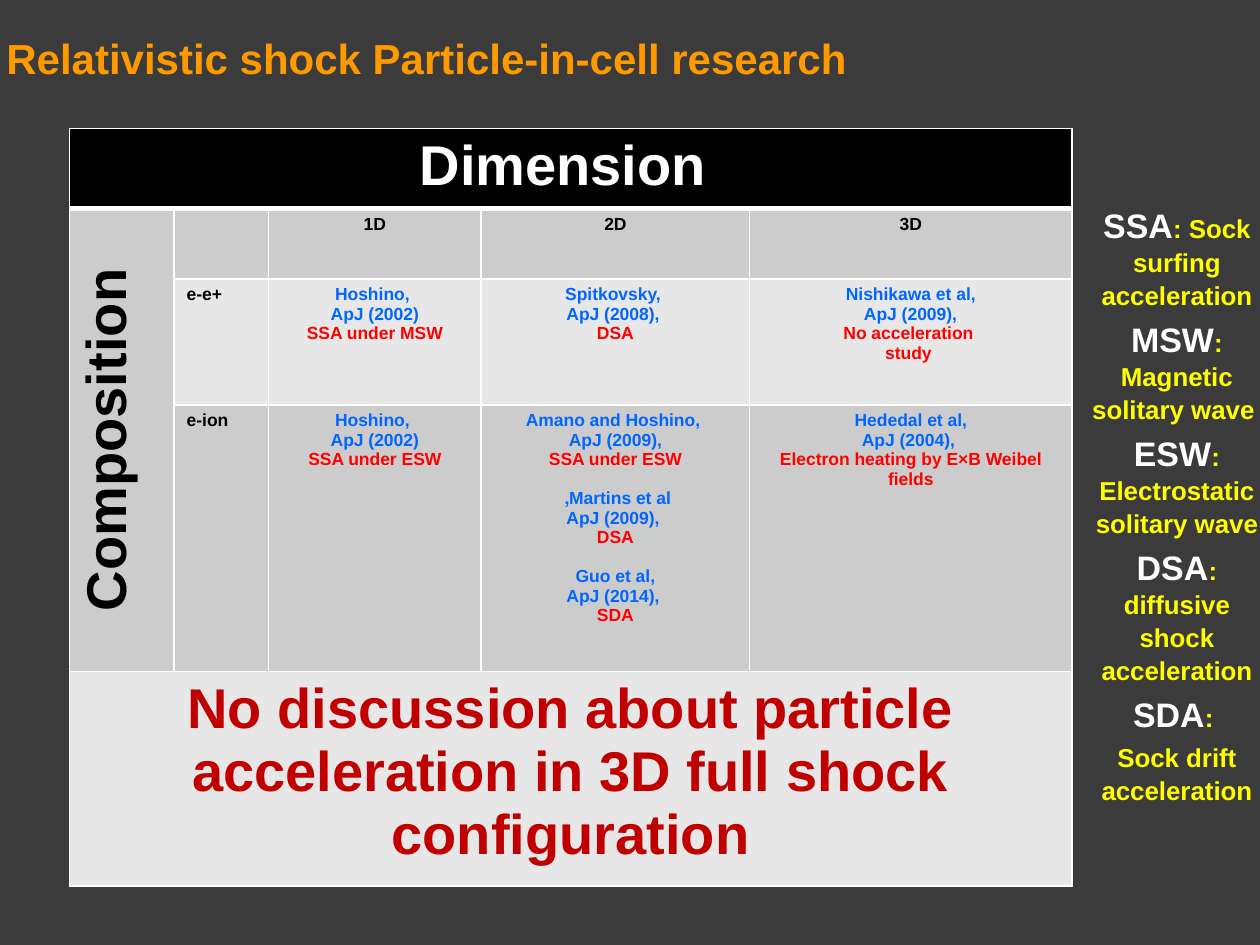
import pptx
import pptx.dml.color
import pptx.enum.text
import pptx.oxml
import pptx.oxml.ns
import pptx.util
from pptx.util import Cm

CENTER = pptx.enum.text.PP_ALIGN.CENTER
LEFT = pptx.enum.text.PP_ALIGN.LEFT
MIDDLE = pptx.enum.text.MSO_ANCHOR.MIDDLE

BLACK, WHITE = "000000", "FFFFFF"
BLUE, RED = "0066FF", "FF0000"
DARK_BAND, LIGHT_BAND = "CCCCCC", "E7E7E7"

COLUMN_WIDTHS = [2.11, 1.9, 4.29, 5.41, 6.5]
ROW_HEIGHTS = [1.52, 1.42, 2.54, 5.38, 4.05]
ROW_FILLS = [BLACK, DARK_BAND, LIGHT_BAND, DARK_BAND, LIGHT_BAND]

# Each study: citation lines in blue, finding lines in red
STUDIES = {
    (2, 2): [(["Hoshino, ", "ApJ (2002)"], ["SSA under MSW"])],
    (2, 3): [(["Spitkovsky, ", "ApJ (2008), "], ["DSA"])],
    (2, 4): [(["Nishikawa et al,", " ApJ (2009), "], ["No acceleration ", "study "])],
    (3, 2): [(["Hoshino, ", "ApJ (2002)"], ["SSA under ESW"])],
    (3, 3): [
        (["Amano and Hoshino, ", "ApJ (2009),"], ["SSA under ESW"]),
        (["Martins et al, ", "ApJ (2009), "], ["DSA"]),
        (["Guo et al,", "ApJ (2014), "], ["SDA"]),
    ],
    (3, 4): [(["Hededal et al,", "ApJ (2004), "],
              ["Electron heating by E×B Weibel fields"])],
}
RIGHT_TO_LEFT_LINE = "Martins et al, "

LEGEND = [
    ("SSA", ": Sock surfing acceleration"),
    ("MSW", ": Magnetic solitary wave "),
    ("ESW", ": Electrostatic solitary wave"),
    ("DSA", ": diffusive shock acceleration"),
    ("SDA", ": "),
    ("", "Sock drift acceleration"),
]


def color(hex_string):
    return pptx.dml.color.RGBColor.from_string(hex_string)


def set_font(font, size, hex_string):
    font.name = "Arial"
    font.bold = True
    font.size = pptx.util.Pt(size)
    font.color.rgb = color(hex_string)


def add_paragraph(text_frame, text="", size=10, hex_string=BLACK, alignment=CENTER):
    """Fill the first paragraph while it is empty, otherwise append one."""
    paragraph = text_frame.paragraphs[0]
    if paragraph.runs:
        paragraph = text_frame.add_paragraph()
    paragraph.alignment = alignment
    set_font(paragraph.font, size, hex_string)
    if text:
        paragraph.add_run().text = text
    return paragraph


def add_text_box(slide, left, top, width, height):
    shape = slide.shapes.add_textbox(Cm(left), Cm(top), Cm(width), Cm(height))
    shape.text_frame.word_wrap = True
    return shape.text_frame


def set_borders(cell, top, bottom):
    properties = cell._tc.get_or_add_tcPr()
    sides = [("lnL", 1), ("lnR", 1), ("lnT", top), ("lnB", bottom)]
    for position, (side, points) in enumerate(sides):
        properties.insert(position, pptx.oxml.parse_xml(
            f'<a:{side} {pptx.oxml.ns.nsdecls("a")} w="{points * 12700}">'
            f'<a:solidFill><a:srgbClr val="{WHITE}"/></a:solidFill></a:{side}>'))


def add_grid(slide):
    frame = slide.shapes.add_table(
        len(ROW_HEIGHTS), len(COLUMN_WIDTHS), Cm(1.4), Cm(2.59),
        Cm(sum(COLUMN_WIDTHS)), Cm(sum(ROW_HEIGHTS)))
    table = frame.table
    for column, width in zip(table.columns, COLUMN_WIDTHS):
        column.width = Cm(width)
    for index, (row, height) in enumerate(zip(table.rows, ROW_HEIGHTS)):
        row.height = Cm(height)
        for column_index, cell in enumerate(row.cells):
            cell.fill.solid()
            fill = DARK_BAND if index and column_index == 0 else ROW_FILLS[index]
            cell.fill.fore_color.rgb = color(
                LIGHT_BAND if index == len(ROW_HEIGHTS) - 1 else fill)
            set_borders(cell, 3 if index == 1 else 1, 3 if index == 0 else 1)
    table.cell(0, 0).merge(table.cell(0, 4))
    table.cell(1, 0).merge(table.cell(3, 0))
    table.cell(4, 0).merge(table.cell(4, 4))
    return table


def add_studies(cell, studies):
    for number, (citation, finding) in enumerate(studies):
        lines = [(text, BLUE) for text in citation] + [(text, RED) for text in finding]
        for line_number, (text, hex_string) in enumerate(lines):
            paragraph = add_paragraph(cell.text_frame, text, 10, hex_string)
            if number and line_number == 0:
                paragraph.space_before = pptx.util.Pt(11)
            if text == RIGHT_TO_LEFT_LINE:
                paragraph._p.get_or_add_pPr().set("rtl", "1")


def add_research_table(slide):
    table = add_grid(slide)

    # Headings
    add_paragraph(table.cell(0, 0).text_frame, "Dimension ", 32, WHITE)
    composition = table.cell(1, 0)
    composition._tc.get_or_add_tcPr().set("vert", "vert270")
    add_paragraph(composition.text_frame, "Composition", 32)
    for column, text in enumerate(["1D", "2D", "3D"], start=2):
        add_paragraph(table.cell(1, column).text_frame, text)
    for row, text in enumerate(["e-e+", "e-ion"], start=2):
        add_paragraph(table.cell(row, 1).text_frame, text, alignment=LEFT)

    # Published studies and conclusion
    for (row, column), studies in STUDIES.items():
        add_studies(table.cell(row, column), studies)
    add_paragraph(
        table.cell(4, 0).text_frame,
        "No discussion about particle acceleration in 3D full shock configuration",
        32, "C00000")


def add_title(slide):
    text_frame = add_text_box(slide, 0, 0, 24.97, 2.34)
    text_frame.vertical_anchor = MIDDLE
    text_frame.margin_left = text_frame.margin_right = Cm(0.13)
    add_paragraph(text_frame, "Relativistic shock Particle-in-cell research",
                  24, "FF9900", LEFT)


def add_legend(slide):
    text_frame = add_text_box(slide, 21.64, 3.96, 4.17, 11.3)
    for abbreviation, meaning in LEGEND:
        paragraph = add_paragraph(text_frame, size=14.8, hex_string="FFFF00")
        paragraph.space_before = pptx.util.Pt(3.5)
        paragraph.line_spacing = 1.05
        if abbreviation:
            run = paragraph.add_run()
            run.text = abbreviation
            set_font(run.font, 19.4, WHITE)
        run = paragraph.add_run()
        run.text = meaning
        set_font(run.font, 14.8, "FFFF00")


def main():
    presentation = pptx.Presentation()
    presentation.slide_width = Cm(25.4)
    presentation.slide_height = Cm(19.05)
    slide = presentation.slides.add_slide(presentation.slide_layouts[6])
    slide.background.fill.solid()
    slide.background.fill.fore_color.rgb = color("3B3B3B")

    add_title(slide)
    add_research_table(slide)
    add_legend(slide)
    presentation.save("out.pptx")


if __name__ == "__main__":
    main()
